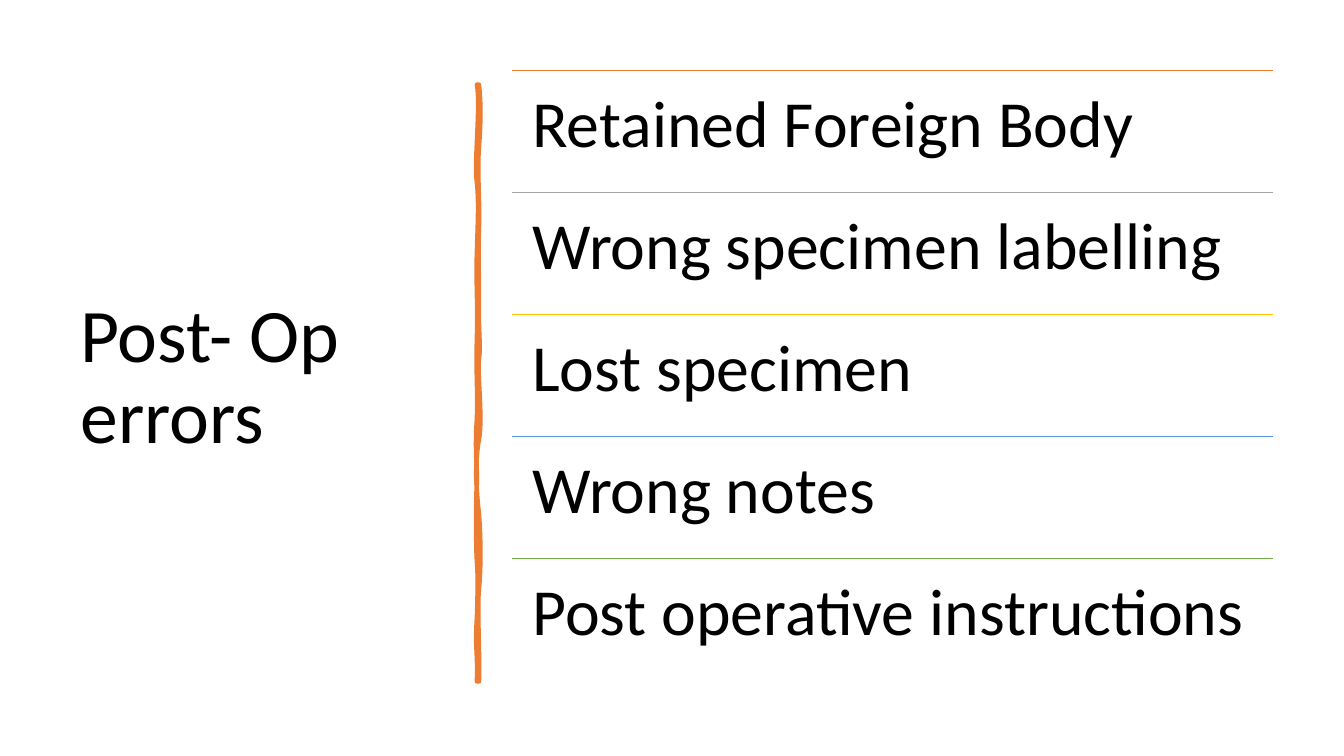
from dataclasses import dataclass

from lxml import etree
from pptx import Presentation
from pptx import util as u
from pptx.dml.color import RGBColor
from pptx.enum import shapes, text
from pptx.oxml.ns import qn


@dataclass(frozen=True)
class Theme:
    font: str = "Calibri"
    ink: str = "000000"
    stroke: str = "ED7D31"
    rules: tuple = ("ED7D31", "A5A5A5", "FFC000", "5B9BD5", "70AD47")
    title_size: int = 54
    item_size: int = 47
    stroke_width: float = 3.25
    rule_width: float = 1


ITEMS = (
    "Retained Foreign Body",
    "Wrong specimen labelling",
    "Lost specimen",
    "Wrong notes",
    "Post operative instructions",
)
LIST_LEFT, LIST_TOP, LIST_WIDTH, ROW_HEIGHT = 5.08, 0.7, 7.55, 1.21

BRUSH_LEFT, BRUSH_TOP, BRUSH_LENGTH, BRUSH_THICKNESS = 1.78, 3.79, 5.92, 0.02
BRUSH_START = (4.75, 0.84)
BRUSH_EDGE = (
    (4.77, 1.02, 4.77, 1.19, 4.75, 1.46),
    (4.73, 1.73, 4.76, 1.95, 4.75, 2.26),
    (4.74, 2.57, 4.75, 2.62, 4.75, 2.94),
    (4.74, 3.25, 4.77, 3.42, 4.75, 3.56),
    (4.73, 3.7, 4.79, 4.14, 4.75, 4.36),
    (4.71, 4.57, 4.72, 4.84, 4.75, 5.1),
    (4.77, 5.36, 4.77, 5.64, 4.75, 5.84),
    (4.73, 6.03, 4.76, 6.5, 4.75, 6.76),
    (4.74, 6.76, 4.73, 6.76, 4.73, 6.76),
    (4.74, 6.46, 4.71, 6.44, 4.73, 6.13),
    (4.74, 5.83, 4.74, 5.7, 4.73, 5.57),
    (4.72, 5.44, 4.72, 4.95, 4.73, 4.77),
    (4.73, 4.59, 4.71, 4.45, 4.73, 4.15),
    (4.74, 3.86, 4.72, 3.73, 4.73, 3.35),
    (4.74, 2.98, 4.72, 2.81, 4.73, 2.5),
    (4.74, 2.18, 4.75, 2, 4.73, 1.81),
    (4.7, 1.63, 4.77, 1.04, 4.73, 0.84),
    (4.74, 0.84, 4.74, 0.84, 4.75, 0.84),
)
BRUSH_BODY = (
    (4.75, 1.15, 4.72, 1.25, 4.75, 1.52),
    (4.77, 1.79, 4.74, 1.97, 4.75, 2.08),
    (4.76, 2.2, 4.74, 2.55, 4.75, 2.94),
    (4.76, 3.33, 4.73, 3.43, 4.75, 3.62),
    (4.77, 3.81, 4.77, 3.97, 4.75, 4.3),
    (4.72, 4.63, 4.75, 4.74, 4.75, 5.16),
    (4.75, 5.57, 4.74, 5.53, 4.75, 5.78),
    (4.76, 6.03, 4.74, 6.47, 4.75, 6.76),
    (4.74, 6.75, 4.73, 6.75, 4.73, 6.76),
    (4.7, 6.49, 4.74, 6.32, 4.73, 6.13),
    (4.72, 5.95, 4.75, 5.69, 4.73, 5.39),
    (4.71, 5.1, 4.76, 5, 4.73, 4.71),
    (4.7, 4.42, 4.77, 4.2, 4.73, 3.86),
    (4.69, 3.51, 4.74, 3.25, 4.73, 3),
    (4.71, 2.75, 4.71, 2.59, 4.73, 2.38),
    (4.74, 2.16, 4.74, 1.85, 4.73, 1.64),
    (4.71, 1.43, 4.75, 1.21, 4.73, 0.84),
    (4.74, 0.84, 4.74, 0.84, 4.75, 0.84),
)


class SlideBuilder:
    def __init__(self, page, theme):
        self.page = page
        self.theme = theme

    def label(self, words, left, top, width, height, size, anchor, inset=(0.1, 0.05)):
        box = self.page.shapes.add_textbox(*map(u.Inches, (left, top, width, height)))
        frame = box.text_frame
        frame.word_wrap = True
        frame.vertical_anchor = anchor
        frame.margin_left = frame.margin_right = u.Inches(inset[0])
        frame.margin_top = frame.margin_bottom = u.Inches(inset[1])
        para = frame.paragraphs[0]
        para.text = words
        para.line_spacing = 0.9
        para.font.name = self.theme.font
        para.font.size = u.Pt(size)
        para.font.color.rgb = RGBColor.from_string(self.theme.ink)

    def rule(self, left, top, width, color):
        line = self.page.shapes.add_connector(
            shapes.MSO_CONNECTOR.STRAIGHT,
            *map(u.Inches, (left, top, left + width, top)),
        )
        line.line.color.rgb = RGBColor.from_string(color)
        line.line.width = u.Pt(self.theme.rule_width)
        etree.SubElement(line._element.spPr, qn("a:effectLst"))

    def brush(self):
        left, top, length, thickness = map(
            u.Inches, (BRUSH_LEFT, BRUSH_TOP, BRUSH_LENGTH, BRUSH_THICKNESS))
        pen = self.page.shapes.build_freeform(left, top)
        pen.add_line_segments([(left + length, top), (left + length, top + thickness),
                               (left, top + thickness)], close=True)
        brush = pen.convert_to_shape()
        brush.rotation = 90
        brush.shadow.inherit = False
        color = RGBColor.from_string(self.theme.stroke)
        brush.fill.solid()
        brush.fill.fore_color.rgb = color
        brush.line.color.rgb = color
        brush.line.width = u.Pt(self.theme.stroke_width)
        outline = brush.line._get_or_add_ln()
        outline.set("cap", "rnd")
        etree.SubElement(outline, qn("a:round"))
        paths = brush._element.spPr.find(".//" + qn("a:pathLst"))
        paths.clear()
        self.curved_path(paths, BRUSH_EDGE, length, thickness, fill="none")
        self.curved_path(paths, BRUSH_BODY, length, thickness, stroke="0")

    def curved_path(self, paths, curves, width, height, **painting):
        outline = etree.SubElement(paths, qn("a:path"), w=str(width), h=str(height), **painting)
        self.path_step(outline, "a:moveTo", BRUSH_START)
        for curve in curves:
            self.path_step(outline, "a:cubicBezTo", curve)
        etree.SubElement(outline, qn("a:close"))

    def path_step(self, outline, tag, values):
        step = etree.SubElement(outline, qn(tag))
        for across, down in zip(values[::2], values[1::2]):
            etree.SubElement(step, qn("a:pt"),
                             x=str(u.Inches(down - BRUSH_START[1])),
                             y=str(u.Inches(BRUSH_START[0] - across)))


def main():
    deck = Presentation()
    deck.slide_width, deck.slide_height = u.Inches(13.33), u.Inches(7.5)
    theme = Theme()
    slide = SlideBuilder(deck.slides.add_slide(deck.slide_layouts[6]), theme)

    slide.label("Post- Op errors", 0.7, 0.7, 3.74, 6.11,
                theme.title_size, text.MSO_ANCHOR.MIDDLE)
    slide.brush()
    for row, (item, color) in enumerate(zip(ITEMS, theme.rules)):
        top = LIST_TOP + row * ROW_HEIGHT
        slide.rule(LIST_LEFT, top, LIST_WIDTH, color)
        slide.label(item, LIST_LEFT, top, LIST_WIDTH, ROW_HEIGHT,
                    theme.item_size, text.MSO_ANCHOR.TOP, inset=(0.2, 0.2))
    deck.save("out.pptx")


if __name__ == "__main__":
    main()
